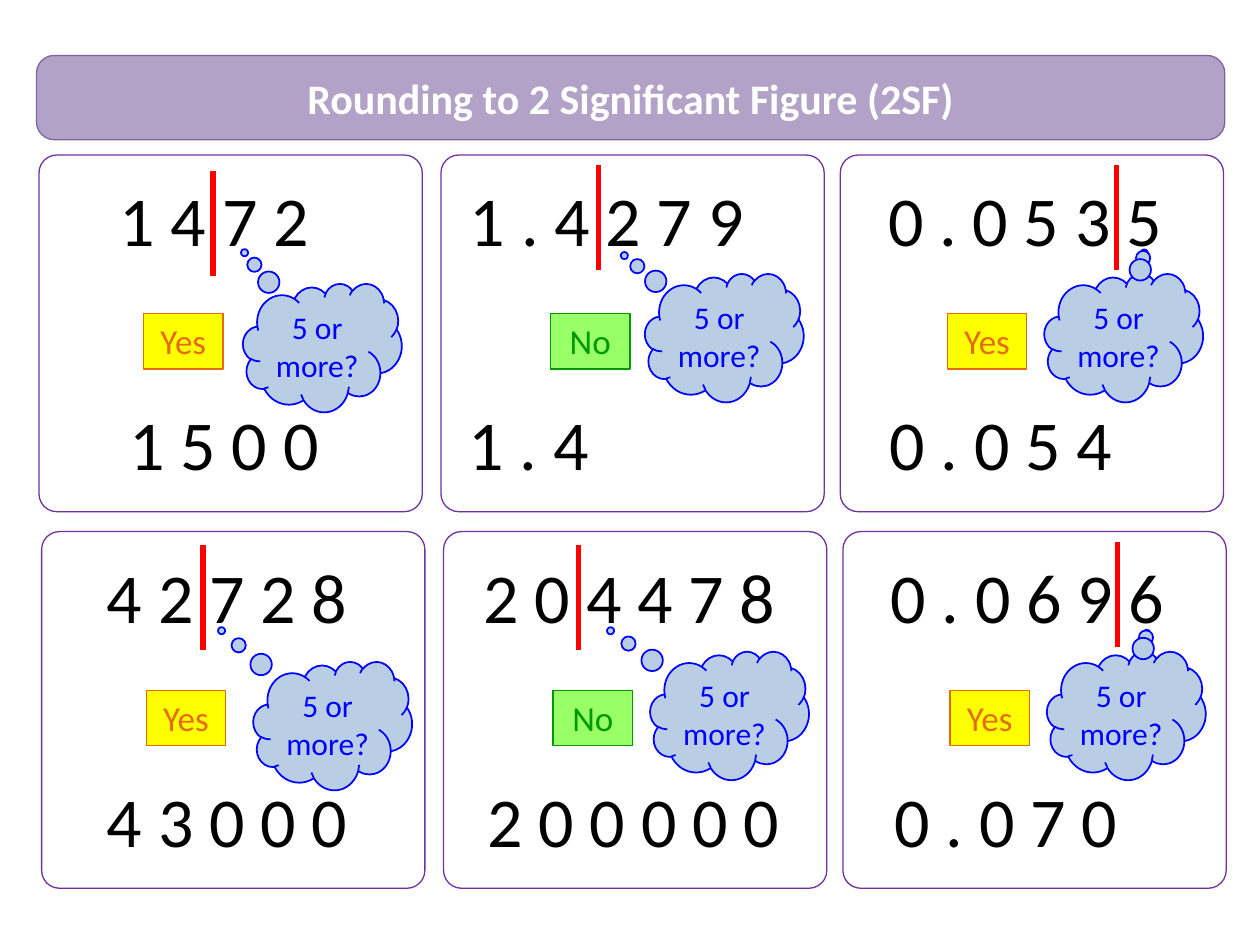
from dataclasses import dataclass

from lxml.etree import SubElement
from pptx import Presentation
from pptx.dml.color import RGBColor
from pptx.enum.shapes import MSO_CONNECTOR as CONNECTOR, MSO_SHAPE as SHAPE
from pptx.enum.text import MSO_ANCHOR as ANCHOR, MSO_AUTO_SIZE as AUTO_SIZE, PP_ALIGN as ALIGN
from pptx.oxml.ns import qn
from pptx.util import Pt

FONT = "Calibri"
COLUMN_LEFTS = (22.3, 252, 480.2)
ROW_TOP, ROW_STEP, ROW_SHIFT = 88.6, 215.2, 1.5
PANEL_WIDTH, PANEL_HEIGHT = 219, 203.8
VERDICT_COLOURS = {"Yes": ("FFFF00", "E46C0A"), "No": ("99FF66", "009900")}


@dataclass
class Example:
    question: str
    question_x: float
    cut_x: float
    cut_y: float
    verdict: str
    verdict_x: float
    cloud_x: float
    cloud_y: float
    pointer: tuple
    answer: str
    answer_x: float
    number_width: float = 174


EXAMPLES = (
    Example("1 4 7 2", 39, 99.4, 9.4, "Yes", 59.8, 116.6, 73.4, (-0.49, -0.74), "1 5 0 0", 44.6),
    Example("1 . 4 2 7 9", 9.4, 90, 5.8, "No", 62.6, 116.6, 67.7, (-0.63, -0.64), "1 . 4", 8.6),
    Example("0 . 0 5 3 5", 20.2, 157.7, 5.8, "Yes", 61.2, 116.6, 67.7, (0.13, -0.66), "0 . 0 5 4", 21.1),
    Example("4 2 7 2 8", 30.2, 92.2, 7.9, "Yes", 59.8, 121, 74.2, (-0.7, -0.74), "4 3 0 0 0", 30.2),
    Example("2 0 4 4 7 8", 15.8, 77, 7.9, "No", 62.6, 118.1, 68.4, (-0.75, -0.66), "2 0 0 0 0 0", 18, 200),
    Example("0 . 0 6 9 6", 20.2, 157, 5.8, "Yes", 61.2, 116.6, 68.4, (0.13, -0.64), "0 . 0 7 0", 22.5),
)


def rgb(colour):
    return RGBColor.from_string(colour)


def write(holder, text, size, colour, align=ALIGN.LEFT, anchor=ANCHOR.TOP, bold=False):
    frame = holder.text_frame
    frame.word_wrap = True
    frame.auto_size = AUTO_SIZE.NONE
    frame.vertical_anchor = anchor
    frame.text = text
    paragraph = frame.paragraphs[0]
    paragraph.alignment = align
    font = paragraph.runs[0].font
    font.name, font.size, font.bold = FONT, Pt(size), bold
    font.color.rgb = rgb(colour)


def add_box(shapes, kind, left, top, width, height, fill, outline, weight=0.75, adjust=()):
    box = shapes.add_shape(kind, Pt(left), Pt(top), Pt(width), Pt(height))
    box.shadow.inherit = False
    if fill:
        box.fill.solid()
        box.fill.fore_color.rgb = rgb(fill)
    else:
        box.fill.background()
    box.line.color.rgb = rgb(outline)
    box.line.width = Pt(weight)
    for index, value in enumerate(adjust):
        box.adjustments[index] = value
    return box


def add_label(shapes, text, left, top, width, height, size, colour, align=ALIGN.LEFT):
    label = shapes.add_textbox(Pt(left), Pt(top), Pt(width), Pt(height))
    write(label, text, size, colour, align)


def add_cut(shapes, x, top):
    cut = shapes.add_connector(CONNECTOR.STRAIGHT, Pt(x), Pt(top), Pt(x), Pt(top + 60))
    cut.line.color.rgb = rgb("FF0000")
    cut.line.width = Pt(3)
    SubElement(cut.element.spPr, qn("a:effectLst"))


def add_thought(shapes, left, top, pointer):
    thought = shapes.add_group_shape().shapes
    add_box(thought, SHAPE.CLOUD_CALLOUT, left, top, 90.7, 73.4, "B9CDE5", "0000FF", 1, pointer)
    add_label(thought, "5 or more?", left + 4.6, top + 10.6, 75.6, 51, 18, "0000FF", ALIGN.CENTER)


def add_verdict(shapes, verdict, left, top):
    fill, ink = VERDICT_COLOURS[verdict]
    tag = add_box(shapes, SHAPE.RECTANGLE, left, top, 45.4, 31.7, fill, ink)
    write(tag, verdict, 20, ink, ALIGN.CENTER)


def add_example(shapes, example, left, top):
    add_box(shapes, SHAPE.ROUNDED_RECTANGLE, left, top, PANEL_WIDTH, PANEL_HEIGHT,
            None, "7030A0", adjust=(0.05,))
    add_cut(shapes, left + example.cut_x, top + example.cut_y)
    add_verdict(shapes, example.verdict, left + example.verdict_x, top + 90.7)
    for number, x, y in ((example.question, example.question_x, 9),
                         (example.answer, example.answer_x, 136.8)):
        add_label(shapes, number, left + x, top + y, example.number_width, 55.4, 40, "000000")
        if y == 9:
            add_thought(shapes, left + example.cloud_x, top + example.cloud_y, example.pointer)


def add_heading(slide, text):
    left, top, width, height = 20.9, 31.7, 679, 48.2
    banner = add_box(slide.shapes, SHAPE.ROUNDED_RECTANGLE, left, top, width, height,
                     "B3A2C7", "8064A2", adjust=(0.21,))
    title = slide.shapes.title
    title.left, title.top, title.width, title.height = Pt(left), Pt(top), Pt(width), Pt(height)
    write(title, text, 24, "FFFFFF", ALIGN.CENTER, ANCHOR.MIDDLE, True)
    title.element.addprevious(banner.element)


def main():
    deck = Presentation()
    deck.slide_width, deck.slide_height = Pt(720), Pt(540)
    slide = deck.slides.add_slide(deck.slide_layouts[5])
    add_heading(slide, "Rounding to 2 Significant Figure (2SF)")
    for index, example in enumerate(EXAMPLES):
        row, column = divmod(index, len(COLUMN_LEFTS))
        add_example(slide.shapes, example, COLUMN_LEFTS[column] + row * ROW_SHIFT,
                    ROW_TOP + row * ROW_STEP)
    deck.save("out.pptx")


if __name__ == "__main__":
    main()
